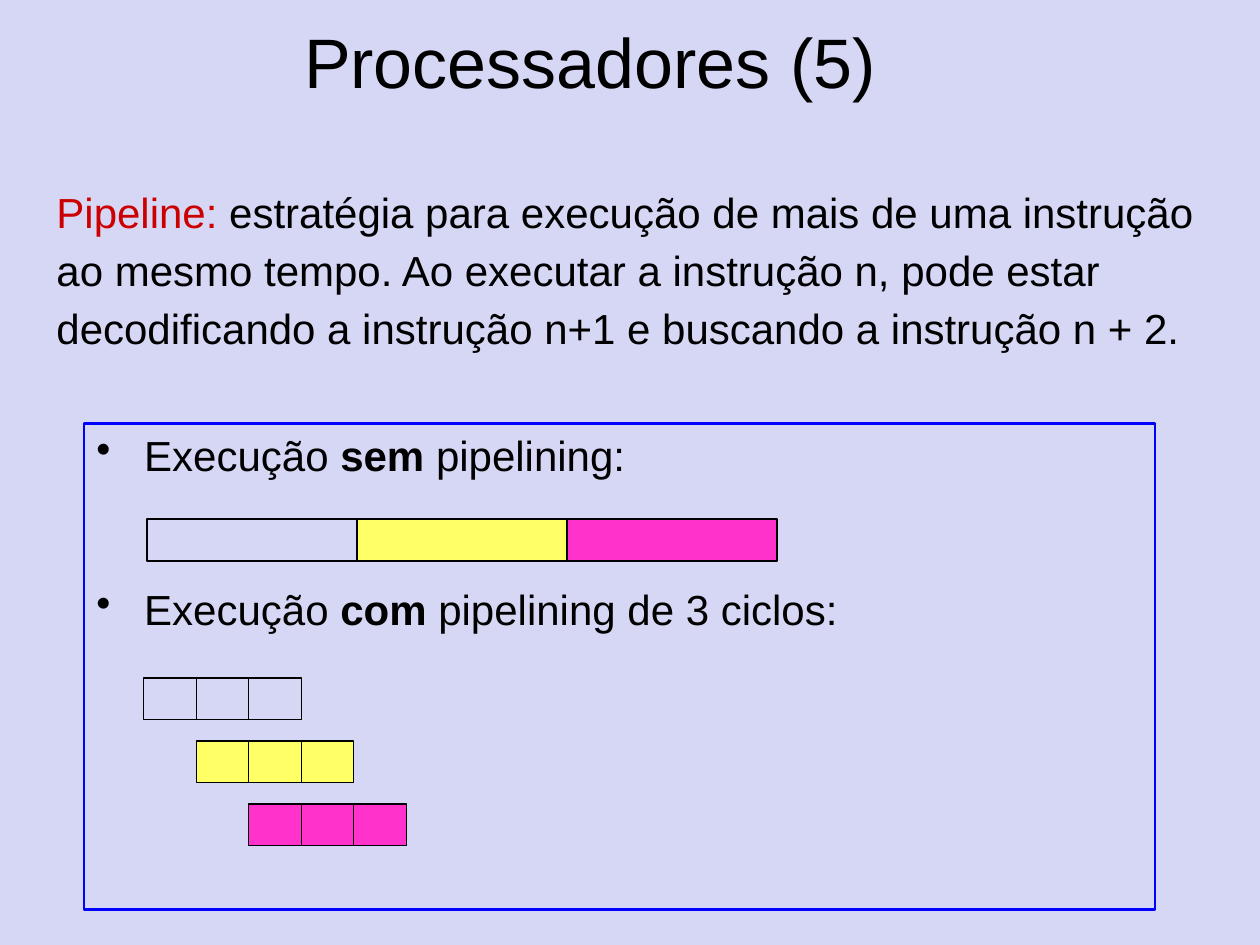
from dataclasses import dataclass

from lxml import etree
from pptx import Presentation
from pptx.dml.color import RGBColor
from pptx.enum.shapes import MSO_SHAPE
from pptx.enum.text import MSO_ANCHOR, MSO_AUTO_SIZE, PP_ALIGN
from pptx.oxml.ns import qn
from pptx.util import Inches, Pt

RECT = MSO_SHAPE.RECTANGLE
TOP, MIDDLE = MSO_ANCHOR.TOP, MSO_ANCHOR.MIDDLE
LEFT, CENTER = PP_ALIGN.LEFT, PP_ALIGN.CENTER
NO_FIT = MSO_AUTO_SIZE.NONE
TITLE_ONLY = 5


@dataclass(frozen=True)
class Theme:
    """Colours, font and type sizes of the slide."""
    font: str = "Arial"
    title: int = 40
    body: int = 24
    back: str = "D6D6F5"
    ink: str = "000000"
    term: str = "CC0000"
    frame: str = "0000FF"
    yellow: str = "FFFF66"
    pink: str = "FF33CC"


class SlideBuilder:
    """Draws styled elements on one slide, on a grid of 24 columns by 22.5 rows."""

    def __init__(self, prs, theme):
        """Add a title-only slide with the theme's background."""
        self.theme = theme
        self.s = prs.slides.add_slide(prs.slide_layouts[TITLE_ONLY])
        self.col, self.row = prs.slide_width / 24, prs.slide_height / 22.5
        fill = self.s.background.fill
        fill.solid()
        fill.fore_color.rgb = RGBColor.from_string(theme.back)

    def box(self, x, y, w, h):
        """Turn columns and rows into lengths."""
        return [int(v) for v in (x * self.col, y * self.row, w * self.col, h * self.row)]

    def frame_text(self, tf, anchor=TOP):
        """Set wrapping and anchoring of a text frame."""
        for name, value in dict(word_wrap=True, auto_size=NO_FIT, vertical_anchor=anchor).items():
            setattr(tf, name, value)

    def add_runs(self, p, runs, size, **fmt):
        """Fill a paragraph with (text, colour, bold) runs."""
        for name, value in fmt.items():
            setattr(p, name, value)
        for text, color, bold in runs:
            r = p.add_run()
            r.text = text
            for name, value in dict(name=self.theme.font, size=Pt(size), bold=bold).items():
                setattr(r.font, name, value)
            r.font.color.rgb = RGBColor.from_string(color)

    def title(self, text, *at):
        """Place and fill the title placeholder."""
        sp = self.s.shapes.title
        sp.left, sp.top, sp.width, sp.height = self.box(*at)
        self.frame_text(sp.text_frame, MIDDLE)
        self.add_runs(sp.text_frame.paragraphs[0], [(text, self.theme.ink, False)],
                      self.theme.title, alignment=CENTER)

    def text(self, runs, *at):
        """Add a paragraph in a text box."""
        tf = self.s.shapes.add_textbox(*self.box(*at)).text_frame
        self.frame_text(tf)
        self.add_runs(tf.paragraphs[0], runs, self.theme.body, alignment=LEFT, line_spacing=1.15)

    def rect(self, *at, fill=None, line=None, weight=0.75):
        """Add an outlined rectangle."""
        sp = self.s.shapes.add_shape(RECT, *self.box(*at))
        sp.shadow.inherit = False
        if fill:
            sp.fill.solid()
            sp.fill.fore_color.rgb = RGBColor.from_string(fill)
        else:
            sp.fill.background()
        sp.line.color.rgb = RGBColor.from_string(line or self.theme.ink)
        sp.line.width = Pt(weight)
        return sp

    def bullets(self, items, gap, *at):
        """Add a framed bullet list with a gap between its items."""
        tf = self.rect(*at, line=self.theme.frame, weight=1.5).text_frame
        self.frame_text(tf)
        for i, runs in enumerate(items):
            p = tf.add_paragraph() if i else tf.paragraphs[0]
            self.add_runs(p, runs, self.theme.body, alignment=LEFT,
                          space_before=Pt(gap if i else 0))
            ppr = p._p.get_or_add_pPr()
            ppr.set("marL", str(Inches(0.38)))
            ppr.set("indent", str(-Inches(0.38)))
            etree.SubElement(ppr, qn("a:buChar")).set("char", "•")

    def strip(self, x, y, width, fills):
        """Add a row of adjoining cells."""
        for i, fill in enumerate(fills):
            self.rect(x + i * width, y, width, 1, fill=fill)


def main():
    """Build the slide and save it."""
    prs = Presentation()
    prs.slide_width, prs.slide_height = Inches(10), Inches(7.5)
    t = Theme()
    b = SlideBuilder(prs, t)
    b.title("Processadores (5) ", 1.22, 0, 20.4, 2.88)
    b.bullets([
        [("Execução ", t.ink, False), ("sem ", t.ink, True), ("pipelining:", t.ink, False)],
        [("Execução", t.ink, False), (" com ", t.ink, True),
         ("pipelining de 3 ciclos:", t.ink, False)],
    ], 59, 1.6, 10.08, 20.4, 11.58)
    instructions = [None, t.yellow, t.pink]
    b.strip(2.8, 12.36, 4, instructions)
    for i, fill in enumerate(instructions):
        b.strip(2.74 + i, 16.14 + 1.5 * i, 1, [fill] * 3)
    b.text([
        ("Pipeline: ", t.term, False),
        ("estratégia para execução de mais de uma instrução ao mesmo tempo. "
         "Ao executar a instrução n, pode estar decodificando a instrução n+1 "
         "e buscando a instrução n + 2.", t.ink, False),
    ], 0.84, 4.11, 22.49, 4.29)
    prs.save("out.pptx")


if __name__ == "__main__":
    main()
